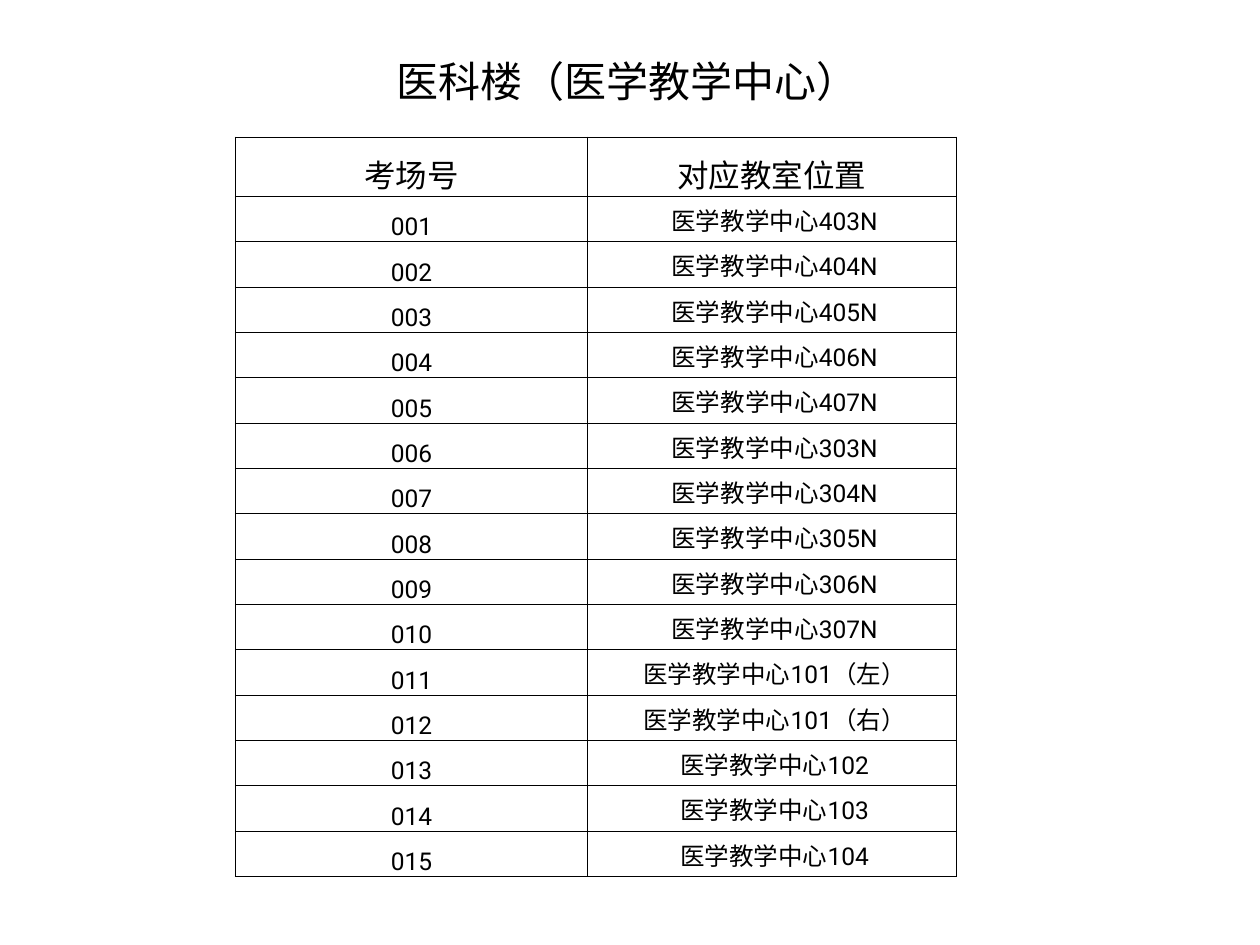
import dataclasses

import lxml.etree
import pptx
import pptx.dml.color
import pptx.enum.text
import pptx.oxml.ns
import pptx.util


@dataclasses.dataclass(frozen=True)
class Theme:
    """Colours, fonts, type sizes and line widths of the slide."""
    ink: str = "000000"
    paper: str = "FFFFFF"
    chinese_font: str = "Noto Sans CJK SC"
    latin_font: str = "Roboto"
    title_size: int = 24
    header_size: int = 18
    body_size: int = 14
    outer_line: float = 1
    inner_line: float = 0.5


@dataclasses.dataclass(frozen=True)
class Box:
    """A region in shares of the slide's width and height."""
    left: float
    top: float
    width: float
    height: float

    def place(self, presentation):
        """Return left, top, width and height as lengths."""
        across, down = presentation.slide_width, presentation.slide_height
        return (int(self.left * across), int(self.top * down),
                int(self.width * across), int(self.height * down))


THEME = Theme()
TITLE_BOX = Box(0.305, 0.052, 0.414, 0.067)
TABLE_BOX = Box(0.187, 0.1453, 0.572, 0.7827)
COLUMN_SHARES = (0.488, 0.512)
HEADER_SHARE = 0.08
TITLE = "医科楼（医学教学中心）"
HEADERS = ("考场号", "对应教室位置")
BUILDING = "医学教学中心"
ROOMS = ([f"{number}N" for number in (*range(403, 408), *range(303, 308))]
         + ["101（左）", "101（右）", "102", "103", "104"])


def add_run(paragraph, text, size, latin_font):
    """Add one run with its Latin and East Asian fonts."""
    run = paragraph.add_run()
    run.text = text
    run.font.size = pptx.util.Pt(size)
    run.font.name = latin_font
    run.font.color.rgb = pptx.dml.color.RGBColor.from_string(THEME.ink)
    east_asian = lxml.etree.SubElement(
        run.font._element, pptx.oxml.ns.qn("a:ea"))
    east_asian.set("typeface", THEME.chinese_font)


def set_borders(cell, widths):
    """Draw the left, right, top and bottom borders of a cell."""
    properties = cell._tc.get_or_add_tcPr()
    for position, (side, width) in enumerate(zip("LRTB", widths)):
        line = lxml.etree.Element(pptx.oxml.ns.qn(f"a:ln{side}"))
        line.set("w", str(int(pptx.util.Pt(width))))
        fill = lxml.etree.SubElement(line, pptx.oxml.ns.qn("a:solidFill"))
        colour = lxml.etree.SubElement(fill, pptx.oxml.ns.qn("a:srgbClr"))
        colour.set("val", THEME.ink)
        properties.insert(position, line)


def fill_cell(cell, text, size, font, anchor):
    """Write centred text in an unfilled cell with narrow margins."""
    cell.fill.background()
    cell.vertical_anchor = anchor
    cell.margin_left = cell.margin_right = pptx.util.Inches(0.01)
    cell.margin_top, cell.margin_bottom = pptx.util.Inches(0.01), 0
    paragraph = cell.text_frame.paragraphs[0]
    paragraph.alignment = pptx.enum.text.PP_ALIGN.CENTER
    add_run(paragraph, text, size, font)


def add_title(slide, place):
    """Add the building's name above the table."""
    frame = slide.shapes.add_textbox(*place).text_frame
    frame.word_wrap = True
    frame.auto_size = pptx.enum.text.MSO_AUTO_SIZE.SHAPE_TO_FIT_TEXT
    add_run(frame.paragraphs[0], TITLE, THEME.title_size, THEME.chinese_font)


def add_room_table(slide, place):
    """Add the table that matches examination rooms to classrooms."""
    records = [HEADERS] + [(f"{number:03d}", f" {BUILDING}{room}")
                           for number, room in enumerate(ROOMS, 1)]
    last_row, last_column = len(records) - 1, len(HEADERS) - 1
    width, height = place[2:]
    table = slide.shapes.add_table(
        len(records), len(HEADERS), *place).table
    table.first_row = table.horz_banding = False
    for column, share in zip(table.columns, COLUMN_SHARES):
        column.width = int(width * share)
    header_height = int(height * HEADER_SHARE)
    for row_index, record in enumerate(records):
        is_header = row_index == 0
        table.rows[row_index].height = (
            header_height if is_header
            else (height - header_height) // last_row)
        size = THEME.header_size if is_header else THEME.body_size
        font = THEME.chinese_font if is_header else THEME.latin_font
        for column_index, text in enumerate(record):
            cell = table.cell(row_index, column_index)
            anchor = (pptx.enum.text.MSO_ANCHOR.BOTTOM
                      if is_header or column_index == 0
                      else pptx.enum.text.MSO_ANCHOR.MIDDLE)
            fill_cell(cell, text, size, font, anchor)
            on_edge = (column_index == 0, column_index == last_column,
                       is_header, row_index == last_row)
            set_borders(cell, [THEME.outer_line if edge else THEME.inner_line
                               for edge in on_edge])


def main():
    """Build the slide and save it."""
    presentation = pptx.Presentation()
    presentation.slide_width = pptx.util.Inches(10)
    presentation.slide_height = pptx.util.Inches(7.5)
    slide = presentation.slides.add_slide(presentation.slide_layouts[6])
    background = slide.background.fill
    background.solid()
    background.fore_color.rgb = pptx.dml.color.RGBColor.from_string(
        THEME.paper)
    add_room_table(slide, TABLE_BOX.place(presentation))
    add_title(slide, TITLE_BOX.place(presentation))
    presentation.save("out.pptx")


if __name__ == "__main__":
    main()
